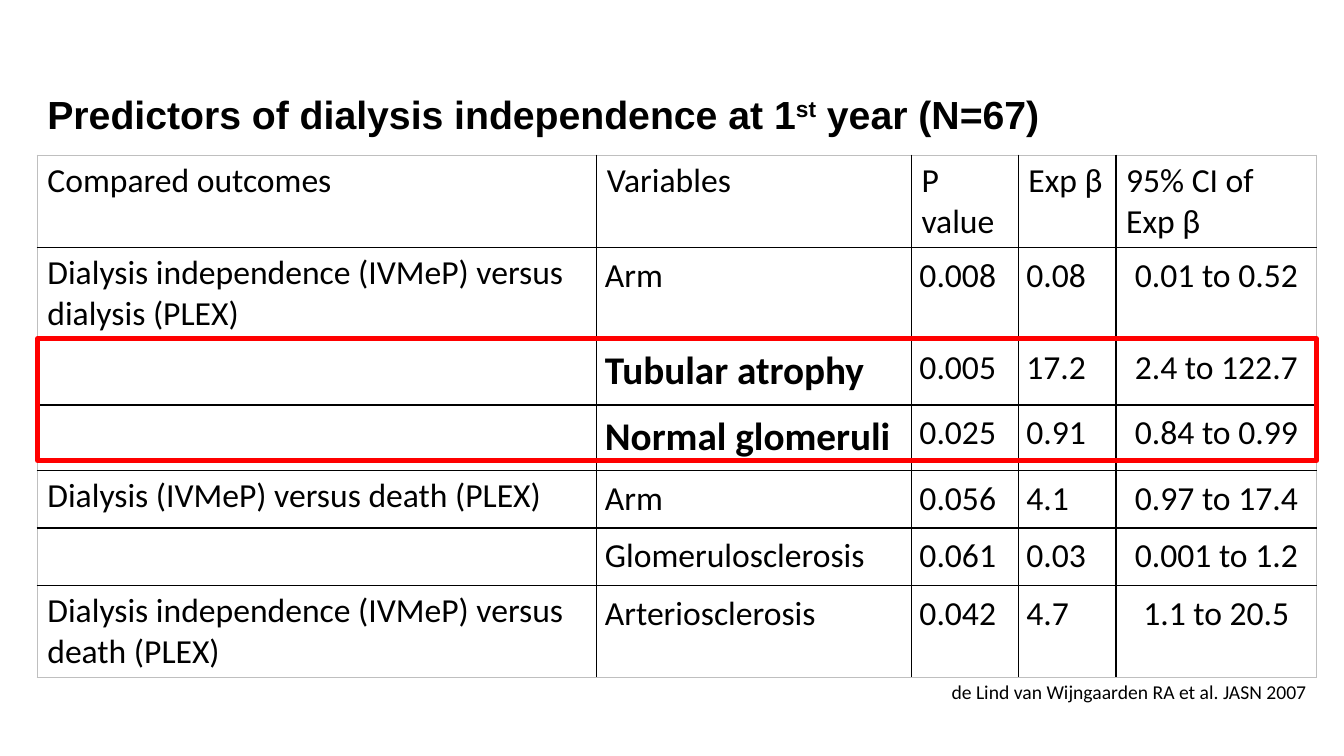
from dataclasses import dataclass

from lxml import etree
from pptx import Presentation
from pptx.dml.color import RGBColor
from pptx.enum import shapes, text
from pptx.oxml.ns import qn
from pptx.util import Emu, Pt

PX = 9144  # EMU per px, 100 px to the inch
BLACK = RGBColor(0x00, 0x00, 0x00)
GREY = RGBColor(0xBF, 0xBF, 0xBF)
RED = RGBColor(0xFF, 0x00, 0x00)
BODY_FONT, TITLE_FONT = "Calibri", "Arial"


def px(n: int) -> Emu:
    return Emu(n * PX)


@dataclass(frozen=True)
class Box:
    left: int
    top: int
    width: int
    height: int

    def emu(self) -> tuple:
        return px(self.left), px(self.top), px(self.width), px(self.height)


@dataclass(frozen=True)
class Row:
    height: int
    cells: tuple
    key: bool = False  # key predictors have a large bold variable name


TITLE = Box(37, 43, 1150, 145)
TABLE = Box(37, 154, 1269, 517)
HIGHLIGHT = Box(37, 336, 1269, 121)
CITATION = Box(762, 670, 544, 34)
COLUMNS = (555, 312, 106, 97, 199)
ROWS = (
    Row(91, ("Compared outcomes", "Variables", "P value", "Exp β", "95% CI of Exp β")),
    Row(91, ("Dialysis independence (IVMeP) versus dialysis (PLEX)",
             "Arm", "0.008", "0.08", "0.01 to 0.52")),
    Row(65, ("", "Tubular atrophy", "0.005", "17.2", "2.4 to 122.7"), key=True),
    Row(65, ("", "Normal glomeruli", "0.025", "0.91", "0.84 to 0.99"), key=True),
    Row(57, ("Dialysis (IVMeP) versus death (PLEX)",
             "Αrm", "0.056", "4.1", "0.97 to 17.4")),
    Row(57, ("", "Glomerulosclerosis", "0.061", "0.03", "0.001 to 1.2")),
    Row(91, ("Dialysis independence (IVMeP) versus death (PLEX)",
             "Αrteriosclerosis", "0.042", "4.7", "1.1 to 20.5")),
)


def add_run(p, words: str, size: int, font: str = BODY_FONT, bold: bool = False):
    r = p.add_run()
    r.text = words
    r.font.name, r.font.size, r.font.bold = font, Pt(size), bold
    r.font.color.rgb = BLACK
    return r


def set_border(cell, side: str, color: RGBColor) -> None:
    ln = etree.SubElement(cell._tc.get_or_add_tcPr(), qn(f"a:{side}"), w=str(Pt(1)))
    fill = etree.SubElement(ln, qn("a:solidFill"))
    etree.SubElement(fill, qn("a:srgbClr"), val=str(color))


def fill_cell(cell, row: Row, i: int, j: int) -> None:
    # Outer edges are grey, inner rules black
    outer = {"lnL": j == 0, "lnR": j == len(COLUMNS) - 1,
             "lnT": i == 0, "lnB": i == len(ROWS) - 1}
    for side, is_outer in outer.items():
        set_border(cell, side, GREY if is_outer else BLACK)
    cell.fill.background()

    p = cell.text_frame.paragraphs[0]
    if i and j:
        cell.margin_left = cell.margin_right = px(8)
        cell.margin_top = cell.margin_bottom = px(8)
        if j == len(COLUMNS) - 1:
            p.alignment = text.PP_ALIGN.CENTER
    if row.cells[j]:
        strong = row.key and j == 1
        add_run(p, row.cells[j], 28 if strong else 24, bold=strong)


def add_predictor_table(s) -> None:
    table = s.shapes.add_table(len(ROWS), len(COLUMNS), *TABLE.emu()).table
    table.first_row = table.horz_banding = False
    for column, width in zip(table.columns, COLUMNS):
        column.width = px(width)
    for i, row in enumerate(ROWS):
        table.rows[i].height = px(row.height)
        for j in range(len(COLUMNS)):
            fill_cell(table.cell(i, j), row, i, j)


def add_citation(s) -> None:
    tf = s.shapes.add_textbox(*CITATION.emu()).text_frame
    tf.word_wrap = True
    tf.auto_size = text.MSO_AUTO_SIZE.SHAPE_TO_FIT_TEXT
    p = tf.paragraphs[0]
    p.alignment = text.PP_ALIGN.RIGHT
    add_run(p, "de Lind van Wijngaarden RA et al. JASN 2007", 14)


def add_highlight(s) -> None:
    sp = s.shapes.add_shape(shapes.MSO_SHAPE.RECTANGLE, *HIGHLIGHT.emu())
    sp.shadow.inherit = False
    sp.fill.background()
    sp.line.color.rgb = RED
    sp.line.width = Pt(3.25)


def set_title(s) -> None:
    title = s.shapes.title
    title.left, title.top, title.width, title.height = TITLE.emu()
    tf = title.text_frame
    tf.word_wrap = True
    tf.auto_size = text.MSO_AUTO_SIZE.NONE
    tf.vertical_anchor = text.MSO_ANCHOR.MIDDLE
    p = tf.paragraphs[0]
    p.alignment = text.PP_ALIGN.LEFT
    p.line_spacing = 0.9
    add_run(p, "Predictors of dialysis independence at 1", 28, TITLE_FONT, True)
    ordinal = add_run(p, "st", 28, TITLE_FONT, True)
    ordinal._r.get_or_add_rPr().set("baseline", "30000")
    add_run(p, " year (Ν=67)", 28, TITLE_FONT, True)


def main() -> None:
    prs = Presentation()
    prs.slide_width, prs.slide_height = px(1333), px(750)
    s = prs.slides.add_slide(prs.slide_layouts[5])
    add_predictor_table(s)
    add_citation(s)
    add_highlight(s)
    set_title(s)
    prs.save("out.pptx")


if __name__ == "__main__":
    main()
